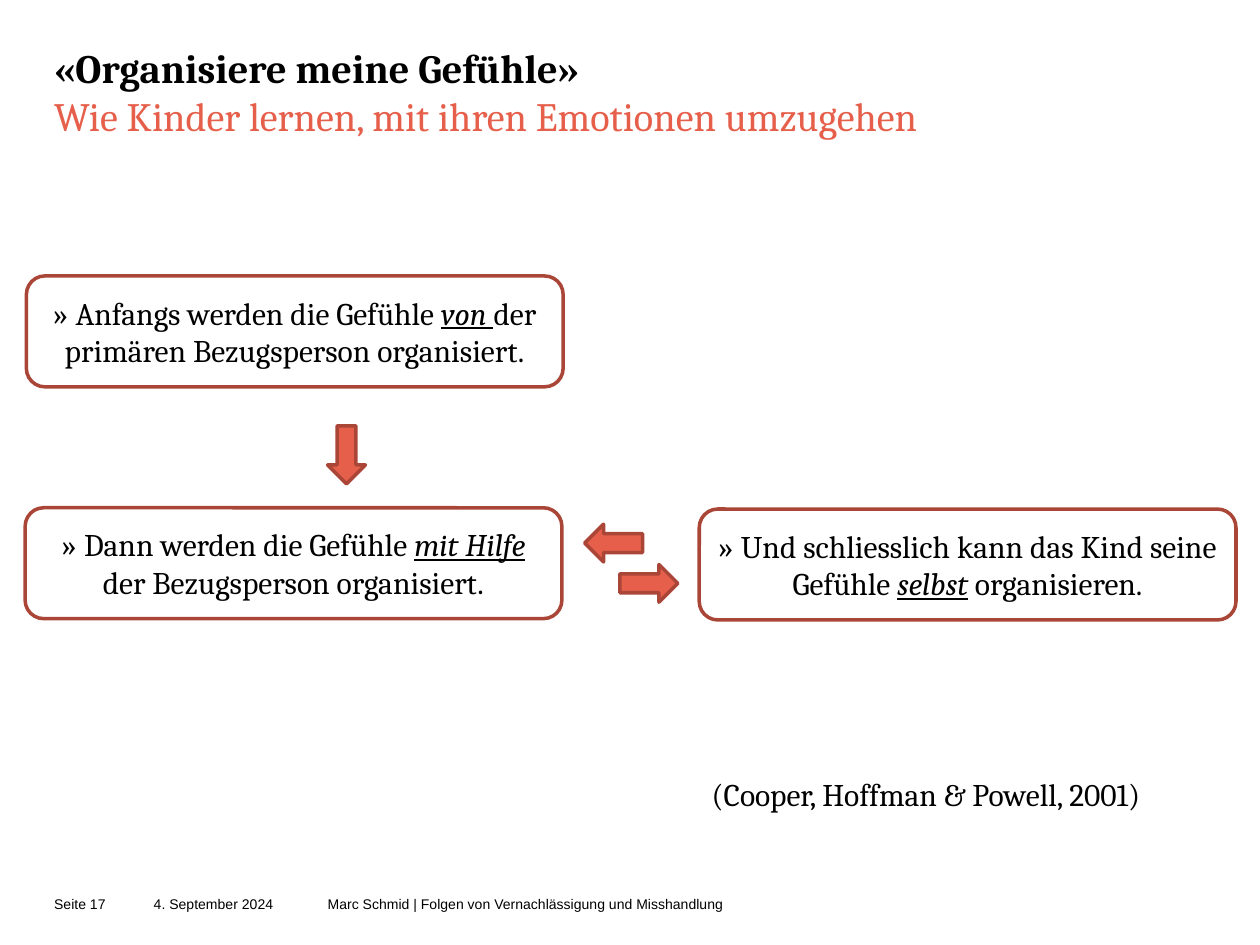
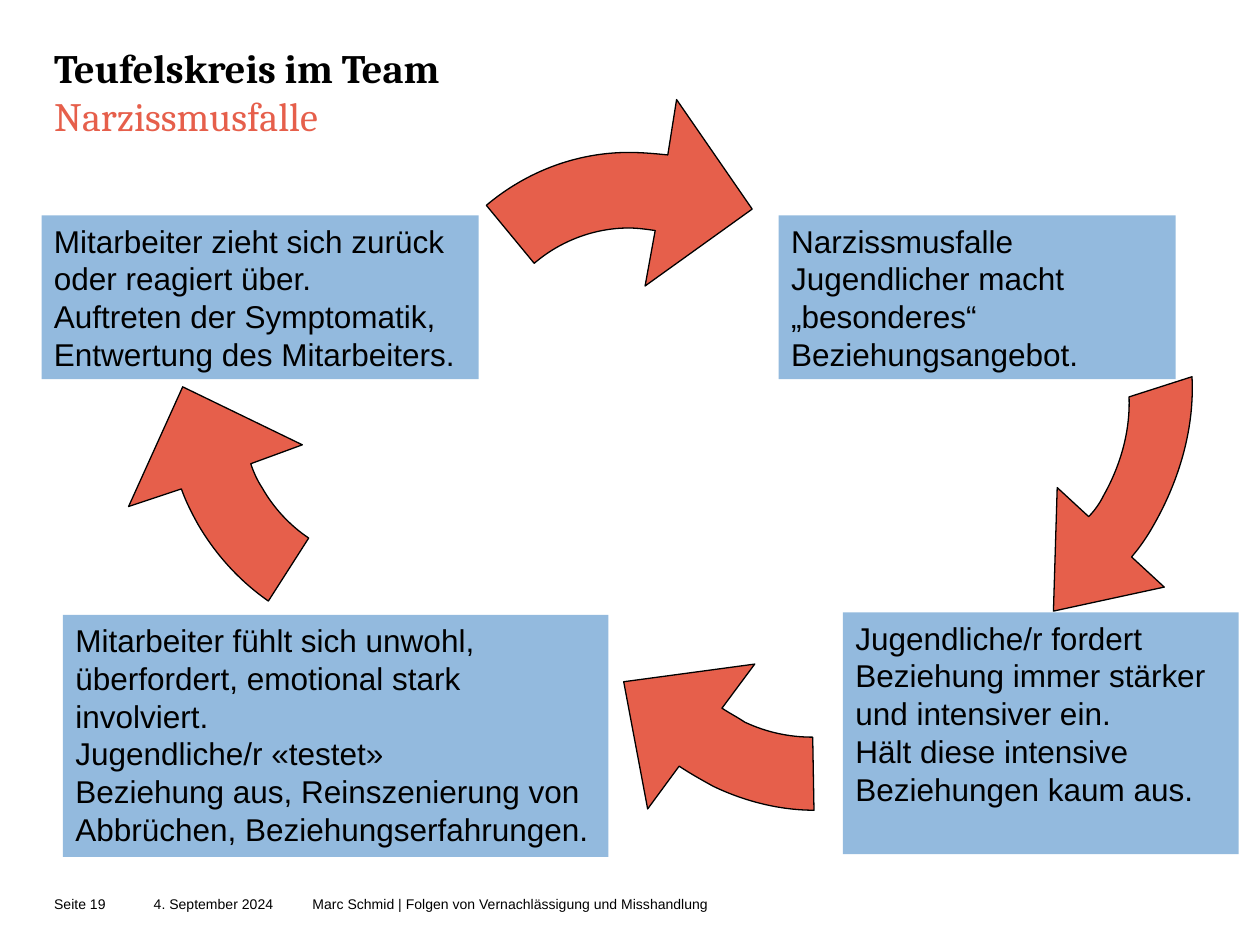
from collections import namedtuple
from math import cos, radians, sin

from lxml import etree
from pptx import Presentation
from pptx.dml.color import RGBColor
from pptx.enum.shapes import MSO_SHAPE
from pptx.enum.text import MSO_ANCHOR, PP_ALIGN
from pptx.oxml.ns import qn
from pptx.util import Inches, Pt

ROUNDED, RECTANGLE, ARROW = MSO_SHAPE.ROUNDED_RECTANGLE, MSO_SHAPE.RECTANGLE, MSO_SHAPE.RIGHT_ARROW
TOP, MIDDLE, BOTTOM = MSO_ANCHOR.TOP, MSO_ANCHOR.MIDDLE, MSO_ANCHOR.BOTTOM
LEFT, CENTER = PP_ALIGN.LEFT, PP_ALIGN.CENTER

SLIDE_WIDTH, SLIDE_HEIGHT = Inches(10), Inches(7.5)
COLUMN, ROW = SLIDE_WIDTH / 10, SLIDE_HEIGHT / 7.5
COLORS = {"text": "000000", "accent": "E65F4B", "border": "AA4637", "panel": "93BADE"}
SERIF, SANS = "Cambria", "Arial"
TITLE_SPACING, BODY_SPACING = Pt(27.6), Pt(21.6)

Box = namedtuple("Box", "left top width height")
Run = namedtuple("Run", "text bold emphasis color", defaults=(False, False, "text"))

TITLE_BOX = Box(0.43, 0.34, 9.14, 0.98)
FOOTER_BOX = Box(0.43, 7.02, 8.86, 0.31)
BODY_BOX = Box(0.2, 2.2, 9.61, 4.32)
CYCLE_BOX = Box(0.33, 0.79, 9.5, 6.01)

PANELS = [
    (Box(0, 0.92, 3.47, 1.3), [
        "Mitarbeiter zieht sich zurück",
        "oder reagiert über.",
        "Auftreten der Symptomatik,",
        "Entwertung des Mitarbeiters."]),
    (Box(5.85, 0.92, 3.15, 1.3), [
        "Narzissmusfalle",
        "Jugendlicher macht „besonderes“",
        "Beziehungsangebot."]),
    (Box(0.17, 4.09, 4.33, 1.92), [
        "Mitarbeiter fühlt sich unwohl, überfordert, emotional stark involviert.",
        "Jugendliche/r «testet»",
        "Beziehung aus, Reinszenierung von Abbrüchen, Beziehungserfahrungen."]),
    (Box(6.36, 4.07, 3.14, 1.92), [
        "Jugendliche/r fordert Beziehung immer stärker und intensiver ein.",
        "Hält diese intensive Beziehungen kaum aus."]),
]

CurvedArrow = namedtuple("CurvedArrow", "frame rotation inner outer head")
CURVED_ARROWS = [
    CurvedArrow(
        Box(2.91, 0.42, 3.51, 3.61), 0,
        [(4.87, 1.04), (4.8, 1.03), (4.73, 1.02), (4.66, 1.02), (4.39, 1.02), (4.12, 1.12), (3.91, 1.3)],
        [(3.53, 0.84), (3.85, 0.57), (4.25, 0.42), (4.66, 0.42), (4.77, 0.42), (4.87, 0.43), (4.97, 0.44)],
        [(5.04, 0), (5.64, 0.87), (4.79, 1.48)]),
    CurvedArrow(
        Box(0.96, 0.73, 3.61, 3.51), 240,
        [(1.66, 2.89), (1.68, 2.95), (1.71, 3.02), (1.75, 3.08), (1.84, 3.24), (1.97, 3.38), (2.12, 3.48)],
        [(1.8, 3.98), (1.57, 3.82), (1.38, 3.61), (1.24, 3.37), (1.19, 3.28), (1.14, 3.18), (1.11, 3.09)],
        [(0.69, 3.23), (1.12, 2.28), (2.07, 2.74)]),
    CurvedArrow(
        Box(5.83, 1.3, 3.61, 2.76), 120,
        [(8.31, 3.31), (8.36, 3.26), (8.4, 3.2), (8.43, 3.14), (8.57, 2.89), (8.64, 2.62), (8.63, 2.36)],
        [(9.13, 2.2), (9.15, 2.59), (9.04, 3), (8.83, 3.37), (8.78, 3.46), (8.72, 3.55), (8.65, 3.63)],
        [(8.91, 3.87), (8.03, 4.06), (8.06, 3.08)]),
    CurvedArrow(
        Box(4.28, 2.19, 3.61, 3.43), 206,
        [(5.4, 4.83), (5.46, 4.87), (5.52, 4.9), (5.58, 4.94), (5.75, 5.02), (5.93, 5.06), (6.12, 5.06)],
        [(6.13, 5.64), (5.86, 5.64), (5.58, 5.57), (5.33, 5.45), (5.24, 5.4), (5.15, 5.35), (5.06, 5.29)],
        [(4.81, 5.63), (4.62, 4.62), (5.66, 4.48)]),
]


def color(name):
    """Return a palette colour."""
    return RGBColor.from_string(COLORS[name])


def place(region, part):
    """Shift a part given relative to a region onto the slide grid."""
    return Box(region.left + part.left, region.top + part.top, part.width, part.height)


def measure(box):
    """Convert a grid box to slide lengths."""
    return [round(box.left * COLUMN), round(box.top * ROW),
            round(box.width * COLUMN), round(box.height * ROW)]


def style_shape(shape, fill=None, line=None, line_width=2):
    """Set fill and outline and remove the shadow."""
    shape.shadow.inherit = False
    if fill:
        shape.fill.solid()
        shape.fill.fore_color.rgb = color(fill)
    else:
        shape.fill.background()
    if line:
        shape.line.color.rgb = color(line)
        shape.line.width = Pt(line_width)
    else:
        shape.line.fill.background()


def add_panel(slide, kind, box, fill=None, line=None):
    """Add a styled preset shape."""
    shape = slide.shapes.add_shape(kind, *measure(box))
    style_shape(shape, fill, line)
    return shape


def write_text(shape, paragraphs, font, size, spacing=None, alignment=LEFT, anchor=TOP, inset=True, wrap=True):
    """Fill a shape with paragraphs, each a list of runs."""
    frame = shape.text_frame
    frame.word_wrap = wrap
    frame.vertical_anchor = anchor
    if not inset:
        frame.margin_left = frame.margin_right = frame.margin_top = frame.margin_bottom = 0
    for index, runs in enumerate(paragraphs):
        paragraph = frame.add_paragraph() if index else frame.paragraphs[0]
        paragraph.alignment = alignment
        paragraph.line_spacing = spacing
        for part in runs:
            if part.text == "\n":
                paragraph.add_line_break()
                continue
            run = paragraph.add_run()
            run.text = part.text
            run.font.name = font
            run.font.size = Pt(size)
            run.font.bold = part.bold
            run.font.italic = run.font.underline = part.emphasis
            run.font.color.rgb = color(part.color)


def add_title(slide, box, title, subtitle):
    """Add the bold title and its accent subtitle."""
    shape = slide.shapes.add_textbox(*measure(box))
    runs = [Run(title, bold=True), Run("\n"), Run(subtitle, color="accent")]
    write_text(shape, [runs], SERIF, 23, TITLE_SPACING, inset=False)


def add_footer(slide, box, number, credit_left, credit_width):
    """Add page number, date and talk credit."""
    entries = [
        (0, 0.63, f"Seite {number}"),
        (0.79, 1.18, "4. September 2024"),
        (credit_left, credit_width, "Marc Schmid | Folgen von Vernachlässigung und Misshandlung"),
    ]
    for left, width, text in entries:
        shape = slide.shapes.add_textbox(*measure(place(box, Box(left, 0, width, box.height))))
        write_text(shape, [[Run(text)]], SANS, 8, anchor=MIDDLE, inset=False)


def add_steps(slide, box):
    """Add the three learning steps, their arrows and the citation."""
    steps = [
        (0.01, -0.01, "» Anfangs werden die Gefühle ", "von ", "der primären Bezugsperson organisiert."),
        (0, 1.83, "» Dann werden die Gefühle ", "mit Hilfe ", "der Bezugsperson organisiert."),
        (5.35, 1.84, "» Und schliesslich kann das Kind seine Gefühle ", "selbst", " organisieren."),
    ]
    for left, top, before, stressed, after in steps:
        shape = add_panel(slide, ROUNDED, place(box, Box(left, top, 4.26, 0.88)), line="border")
        runs = [Run(before), Run(stressed, emphasis=True), Run(after)]
        write_text(shape, [runs], SERIF, 18, BODY_SPACING, CENTER, MIDDLE)
    for left, top, rotation in [(4.72, 2.28, 0), (4.44, 1.96, 180), (2.32, 1.26, 90)]:
        arrow = add_panel(slide, ARROW, place(box, Box(left, top, 0.46, 0.3)), "accent", "border")
        arrow.rotation = rotation
    citation = slide.shapes.add_textbox(*measure(place(box, Box(5.35, 3.73, 4.13, 0.57))))
    write_text(citation, [[Run("(Cooper, Hoffman & Powell, 2001)")]], SERIF, 18, BODY_SPACING,
               anchor=BOTTOM, wrap=False)


def turn_back(point, frame, rotation):
    """Map a point of the cycle into the unrotated frame of its arrow."""
    across = point[0] - frame.left - frame.width / 2
    down = point[1] - frame.top - frame.height / 2
    angle = radians(rotation)
    return (round((across * cos(angle) + down * sin(angle) + frame.width / 2) * COLUMN),
            round((down * cos(angle) - across * sin(angle) + frame.height / 2) * ROW))


def add_command(outline, name, points):
    """Append one drawing command to an outline."""
    command = etree.SubElement(outline, qn(name))
    for x, y in points:
        etree.SubElement(command, qn("a:pt"), x=str(x), y=str(y))


def add_curved_arrow(slide, box, arrow):
    """Draw one bent block arrow within the cycle."""
    inner, outer, head = ([turn_back(point, arrow.frame, arrow.rotation) for point in points]
                          for points in (arrow.inner, arrow.outer, arrow.head))
    builder = slide.shapes.build_freeform(*inner[0])
    builder.add_line_segments([*inner[3::3], *outer[::3], *head], close=True)
    shape = builder.convert_to_shape()
    shape.left, shape.top, shape.width, shape.height = measure(place(box, arrow.frame))
    shape.rotation = arrow.rotation
    style_shape(shape, "accent", "text", 0.75)

    outline = shape.element.find(".//" + qn("a:path"))
    for command in list(outline):
        outline.remove(command)
    outline.set("w", str(shape.width))
    outline.set("h", str(shape.height))
    for name, curve in (("a:moveTo", inner), ("a:lnTo", outer)):
        add_command(outline, name, curve[:1])
        for first in (1, 4):
            add_command(outline, "a:cubicBezTo", curve[first:first + 3])
    for point in [*head, inner[0]]:
        add_command(outline, "a:lnTo", [point])
    add_command(outline, "a:close", [])


def add_cycle(slide, box):
    """Add the vicious circle of arrows and text panels."""
    for arrow in CURVED_ARROWS:
        add_curved_arrow(slide, box, arrow)
    for part, lines in PANELS:
        shape = add_panel(slide, RECTANGLE, place(box, part), "panel")
        write_text(shape, [[Run(line)] for line in lines], SANS, 18, BODY_SPACING)


def add_content_slide(presentation, title, subtitle, add_body, body_box, footer):
    """Add a slide with title, body region and footer."""
    slide = presentation.slides.add_slide(presentation.slide_layouts[6])
    add_title(slide, TITLE_BOX, title, subtitle)
    add_body(slide, body_box)
    add_footer(slide, FOOTER_BOX, *footer)


def main():
    """Build and save the presentation."""
    presentation = Presentation()
    presentation.slide_width, presentation.slide_height = SLIDE_WIDTH, SLIDE_HEIGHT
    add_content_slide(presentation, "«Organisiere meine Gefühle»",
                      "Wie Kinder lernen, mit ihren Emotionen umzugehen",
                      add_steps, BODY_BOX, (17, 2.17, 6.69))
    add_content_slide(presentation, "Teufelskreis im Team", "Narzissmusfalle",
                      add_cycle, CYCLE_BOX, (19, 2.05, 3.29))
    presentation.save("out.pptx")


if __name__ == "__main__":
    main()
